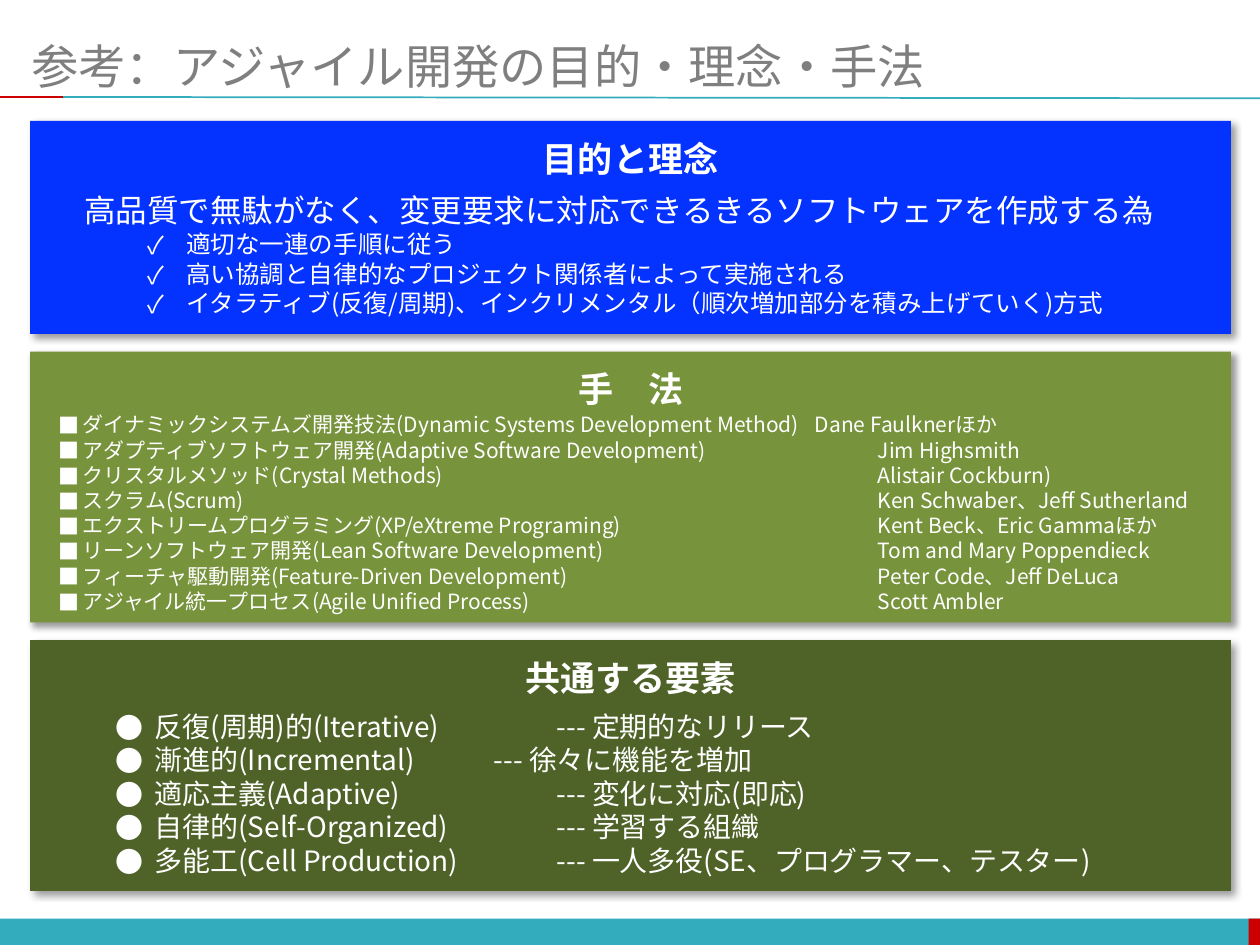
from pptx import Presentation
from pptx.dml.color import RGBColor
from pptx.enum.shapes import MSO_CONNECTOR, MSO_SHAPE
from pptx.enum.text import MSO_ANCHOR, MSO_AUTO_SIZE, PP_ALIGN
from pptx.oxml import parse_xml
from pptx.oxml.ns import nsdecls, qn
from pptx.util import Inches, Pt
from lxml import etree

RECT, STRAIGHT = MSO_SHAPE.RECTANGLE, MSO_CONNECTOR.STRAIGHT
MIDDLE, CENTER = MSO_ANCHOR.MIDDLE, PP_ALIGN.CENTER
GROW = MSO_AUTO_SIZE.SHAPE_TO_FIT_TEXT

THEME = {
    "font": "Noto Sans CJK JP",
    "title": "7F7F7F", "text": "FFFFFF", "teal": "33ACBD", "red": "CC0000",
    "title_size": 27, "heading_size": 20, "lead_size": 18,
}
TITLE = "参考：アジャイル開発の目的・理念・手法"

# A row is (text,) or (text, second column, tab stop in inches).
PANELS = [
    {"heading": "目的と理念", "heading_width": 1.6, "fill": "0432FF", "height": 1.69,
     "lead": "高品質で無駄がなく、変更要求に対応できるきるソフトウェアを作成する為",
     "body": (0.57, 0.51, 8.8, 1.11), "bullet": "✓", "margin": 0.81, "hang": 0.31, "size": 14,
     "rows": [
         ("適切な一連の手順に従う",),
         ("高い協調と自律的なプロジェクト関係者によって実施される",),
         ("イタラティブ(反復/周期)、インクリメンタル（順次増加部分を積み上げていく)方式",)]},
    {"heading": "手　法", "heading_width": 1.04, "fill": "77933C", "height": 2.15,
     "body": (0.37, 0.43, 9.27, 1.72), "bullet": "■", "margin": 0.19, "hang": 0.19, "size": 12,
     "rows": [
         ("ダイナミックシステムズ開発技法(Dynamic Systems Development Method)",
          "Dane Faulknerほか", 6),
         ("アダプティブソフトウェア開発(Adaptive Software Development)", "Jim Highsmith", 6.5),
         ("クリスタルメソッド(Crystal Methods)", "Alistair Cockburn)", 6.5),
         ("スクラム(Scrum)", "Ken Schwaber、Jeff Sutherland", 6.5),
         ("エクストリームプログラミング(XP/eXtreme Programing)", "Kent Beck、Eric Gammaほか", 6.5),
         ("リーンソフトウェア開発(Lean Software Development)", "Tom and Mary Poppendieck", 6.5),
         ("フィーチャ駆動開発(Feature-Driven Development)", "Peter Code、Jeff DeLuca", 6.5),
         ("アジャイル統一プロセス(Agile Unified Process)", "Scott Ambler", 6.5)]},
    {"heading": "共通する要素", "heading_width": 1.88, "fill": "4F6228", "height": 1.99,
     "body": (0.82, 0.5, 8.29, 1.45), "bullet": "●", "margin": 0.31, "hang": 0.31, "size": 16,
     "rows": [
         ("反復(周期)的(Iterative)", "--- 定期的なリリース", 3.5),
         ("漸進的(Incremental)", "--- 徐々に機能を増加", 3),
         ("適応主義(Adaptive)", "--- 変化に対応(即応)", 3.5),
         ("自律的(Self-Organized)", "--- 学習する組織", 3.5),
         ("多能工(Cell Production)", "--- 一人多役(SE、プログラマー、テスター)", 3.5)]},
]
PANEL_LEFT, PANEL_WIDTH, PANEL_TOP, PANEL_GAP = 0.24, 9.53, 0.96, 0.14
HEADING_OFFSET, HEADING_HEIGHT = 0.08, 0.44
SHADOW = (f'<a:effectLst {nsdecls("a")}><a:outerShdw blurRad="{Pt(4)}" dist="{Pt(3)}" '
          'dir="2700000" algn="tl" rotWithShape="0"><a:srgbClr val="000000">'
          '<a:alpha val="40000"/></a:srgbClr></a:outerShdw></a:effectLst>')


def add_rect(s, left, top, width, height, color, shadow=False):
    sp = s.shapes.add_shape(RECT, *map(Inches, (left, top, width, height)))
    sp.shadow.inherit = False
    sp.fill.solid()
    sp.fill.fore_color.rgb = RGBColor.from_string(color)
    sp.line.fill.background()
    if shadow:
        pr = sp.element.spPr
        pr.replace(pr.find(qn("a:effectLst")), parse_xml(SHADOW))


def add_rule(s, x1, y1, x2, y2, color):
    ln = s.shapes.add_connector(STRAIGHT, *map(Inches, (x1, y1, x2, y2)))
    ln.line.color.rgb = RGBColor.from_string(color)
    ln.line.width = Pt(1)
    etree.SubElement(ln.element.spPr, qn("a:effectLst"))


def add_box(s, left, top, width, height, wrap=True):
    tf = s.shapes.add_textbox(*map(Inches, (left, top, width, height))).text_frame
    tf.word_wrap = wrap
    tf.auto_size = GROW
    return tf


def style(p, size, color=THEME["text"], bold=False):
    f = p.font
    f.size, f.bold, f.name = Pt(size), bold, THEME["font"]
    f.color.rgb = RGBColor.from_string(color)
    latin = p._p.pPr.find(qn("a:defRPr")).find(qn("a:latin"))
    latin.addnext(etree.Element(qn("a:ea"), typeface=THEME["font"]))


def add_bullet(p, panel, tab):
    pr = p._p.get_or_add_pPr()
    pr.set("marL", str(Inches(panel["margin"])))
    pr.set("indent", str(-Inches(panel["hang"])))
    etree.SubElement(pr, qn("a:buFont"), typeface=THEME["font"])
    etree.SubElement(pr, qn("a:buChar"), char=panel["bullet"])
    if tab:
        tabs = etree.SubElement(pr, qn("a:tabLst"))
        etree.SubElement(tabs, qn("a:tab"), pos=str(Inches(tab)), algn="l")


def add_panel(s, panel, top):
    add_rect(s, PANEL_LEFT, top, PANEL_WIDTH, panel["height"], panel["fill"], shadow=True)

    width = panel["heading_width"]
    tf = add_box(s, PANEL_LEFT + (PANEL_WIDTH - width) / 2, top + HEADING_OFFSET,
                 width, HEADING_HEIGHT, wrap=False)
    p = tf.paragraphs[0]
    p.text, p.alignment = panel["heading"], CENTER
    style(p, THEME["heading_size"], bold=True)

    left, offset, width, height = panel["body"]
    tf = add_box(s, left, top + offset, width, height)
    p = tf.paragraphs[0]
    if "lead" in panel:
        p.text = panel["lead"]
        style(p, THEME["lead_size"])
        p = tf.add_paragraph()
    for i, (text, *column) in enumerate(panel["rows"]):
        if i:
            p = tf.add_paragraph()
        second, tab = column or (None, None)
        p.text = f"{text}\t{second}" if second else text
        add_bullet(p, panel, tab)
        style(p, panel["size"])


def main():
    prs = Presentation()
    prs.slide_width, prs.slide_height = Inches(10), Inches(7.5)
    s = prs.slides.add_slide(prs.slide_layouts[6])

    add_rect(s, 0, 7.29, 10, 0.22, THEME["teal"])
    add_rect(s, 9.91, 7.29, 0.1, 0.22, THEME["red"])
    add_rule(s, 0.5, 0.77, 10, 0.78, THEME["teal"])
    add_rule(s, 0, 0.77, 0.5, 0.77, THEME["red"])

    tf = add_box(s, 0.25, 0.29, 9.5, 0.46)
    tf.auto_size = MSO_AUTO_SIZE.NONE
    tf.margin_left = tf.margin_right = 0
    tf.vertical_anchor = MIDDLE
    tf.text = TITLE
    style(tf.paragraphs[0], THEME["title_size"], THEME["title"])

    top = PANEL_TOP
    for panel in PANELS:
        add_panel(s, panel, top)
        top += panel["height"] + PANEL_GAP
    prs.save("out.pptx")


if __name__ == "__main__":
    main()
